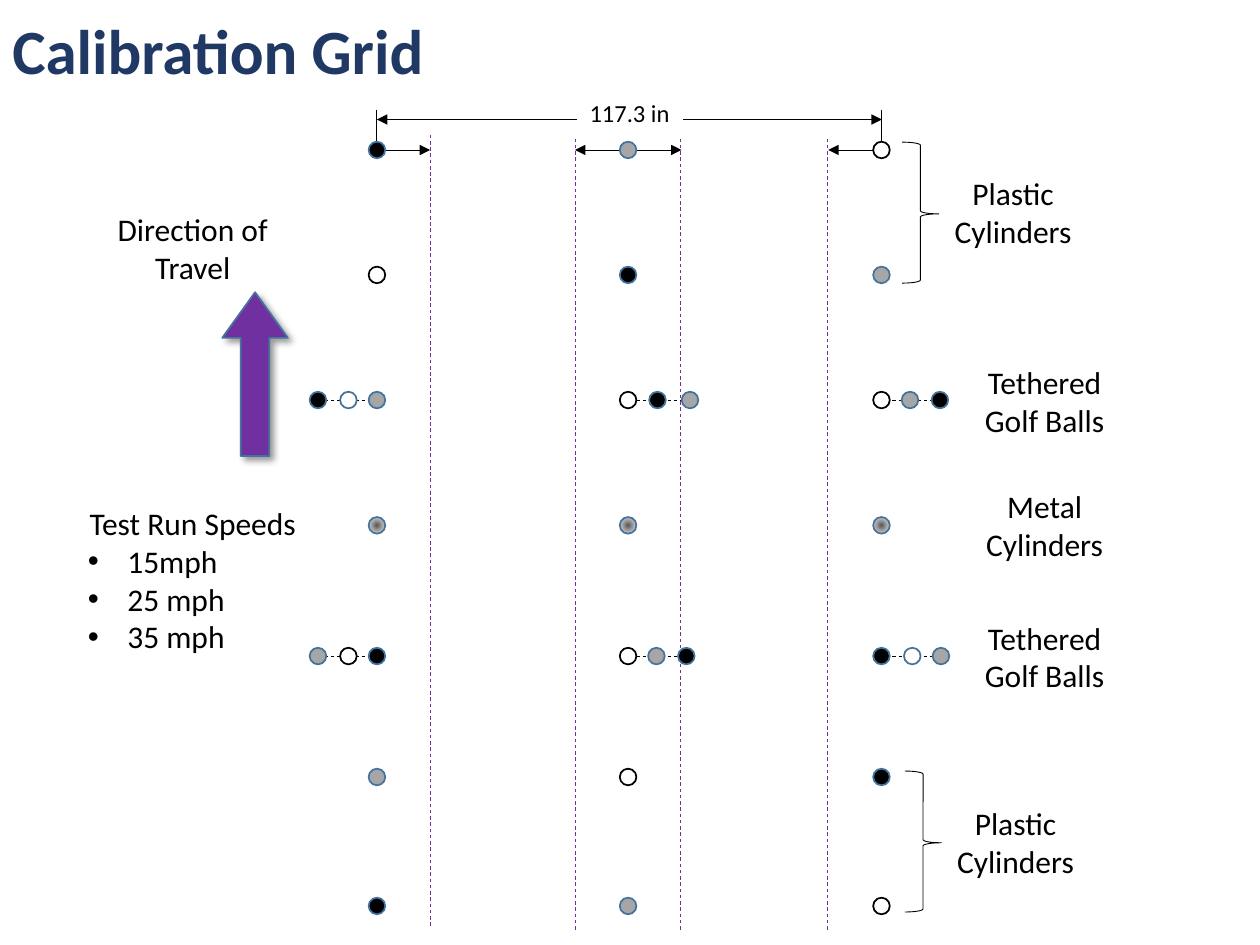
"""Build the calibration grid slide."""
from dataclasses import dataclass

import pptx
import pptx.dml.color
import pptx.enum.dml
import pptx.enum.shapes
import pptx.enum.text
import pptx.oxml
import pptx.oxml.ns
import pptx.util

Pt = pptx.util.Pt
qn = pptx.oxml.ns.qn
Shape = pptx.enum.shapes.MSO_SHAPE
Align = pptx.enum.text.PP_ALIGN
Anchor = pptx.enum.text.MSO_ANCHOR
AutoSize = pptx.enum.text.MSO_AUTO_SIZE

COLORS = {
    "black": "000000", "white": "FFFFFF", "gray": "A6A6A6", "dark": "595959",
    "silver": "AFABAB", "blue": "43739E", "navy": "203864", "purple": "7030A0",
}
NS = 'xmlns:a="http://schemas.openxmlformats.org/drawingml/2006/main"'
DOT = 9.5
COLUMNS = (215.4, 358.9, 503.7)
TOP_ROW = 85.7


@dataclass
class Row:
    y: float
    kinds: str
    xs: tuple = COLUMNS


@dataclass
class Line:
    x1: float
    y1: float
    x2: float
    y2: float
    color: str = "black"
    dash: bool = False
    head: bool = False
    tail: bool = False


@dataclass
class Label:
    text: str
    x: float
    y: float
    w: float = 102.2


DOT_KINDS = {
    "K": ("black", "blue"), "G": ("gray", "blue"), "W": ("white", "black"),
    "B": ("white", "blue"), "M": ("metal", "blue"),
}
ROWS = [
    Row(TOP_ROW, "KGW"),
    Row(157.1, "WKG"),
    Row(228.6, "GWWBKKGGK", COLUMNS + (199.1, 181.7, 375.7, 394.3, 520, 537.1)),
    Row(300.2, "MMM"),
    Row(374.9, "KWKWGGKBG", COLUMNS + (199.1, 181.7, 375.1, 392.2, 521.3, 537.7)),
    Row(444, "GWK"),
    Row(517.7, "KGW"),
]
TETHERS = [Line(x, y, x + 33.8, y, dash=True)
           for y in (228.6, 374.9) for x in (181.8, 360, 502.8)]
GUIDES = [Line(x, y, x, y + 452.2, "purple", dash=True)
          for x, y in ((245.8, 77), (328.6, 79.2), (388.9, 79.2), (473, 79.2))]
DIMENSIONS = [
    Line(215.4, 62.6, 215.4, 81),
    Line(503.9, 62.6, 503.9, 81),
    Line(215.4, 68.3, 503.9, 68.3, head=True, tail=True),
]
OFFSETS = [
    Line(220.2, TOP_ROW, 245.8, TOP_ROW, tail=True),
    Line(363.6, TOP_ROW, 389.4, TOP_ROW, tail=True),
    Line(328.6, TOP_ROW, 354.2, TOP_ROW, head=True),
    Line(473.3, TOP_ROW, 499, TOP_ROW, head=True),
]
LABELS = [
    Label("Direction of Travel", 50.4, 116.6, 119.5),
    Label("Plastic Cylinders", 527.8, 95.8),
    Label("Plastic Cylinders", 529.2, 455.8),
    Label("Tethered Golf Balls", 545.8, 203.8),
    Label("Tethered Golf Balls", 545.8, 349.9),
    Label("Metal Cylinders", 545.8, 275),
]


def rgb(name: str) -> pptx.dml.color.RGBColor:
    """Return a named colour."""
    return pptx.dml.color.RGBColor.from_string(COLORS[name])


def add_text(slide, lines: list[str], x: float, y: float, w: float, h: float, *,
             size: float = 18, color: str = "black", bold: bool = False,
             align=Align.LEFT, anchor=Anchor.TOP, wrap: bool = True,
             grow: bool = True, spacing: float = 1.0, fill: str = "",
             bullets: bool = False):
    """Add a text box whose lines after the first may be bulleted."""
    s = slide.shapes.add_textbox(Pt(x), Pt(y), Pt(w), Pt(h))
    if fill:
        s.fill.solid()
        s.fill.fore_color.rgb = rgb(fill)
    tf = s.text_frame
    tf.word_wrap = wrap
    tf.vertical_anchor = anchor
    tf.auto_size = AutoSize.SHAPE_TO_FIT_TEXT if grow else AutoSize.NONE
    for i, line in enumerate(lines):
        p = tf.paragraphs[0] if i == 0 else tf.add_paragraph()
        bulleted = bullets and i > 0
        p.alignment = Align.LEFT if bulleted else align
        p.line_spacing = spacing
        if bulleted:
            pPr = p._p.get_or_add_pPr()
            pPr.set("marL", str(Pt(22.5)))
            pPr.set("indent", str(Pt(-22.5)))
            pPr.append(pptx.oxml.parse_xml(f'<a:buFont {NS} typeface="Arial"/>'))
            pPr.append(pptx.oxml.parse_xml(f'<a:buChar {NS} char="•"/>'))
        r = p.add_run()
        r.text = line
        r.font.name = "Calibri"
        r.font.size = Pt(size)
        r.font.bold = bold
        r.font.color.rgb = rgb(color)
    return s


def add_shape(slide, kind, x: float, y: float, w: float, h: float, *,
              fill: str = "", line: str = "black", width: float = 1):
    """Add a preset shape with a plain, metal or empty fill."""
    s = slide.shapes.add_shape(kind, Pt(x), Pt(y), Pt(w), Pt(h))
    s.shadow.inherit = False
    s.line.color.rgb = rgb(line)
    s.line.width = Pt(width)
    if not fill:
        s.fill.background()
        return s
    s.fill.solid()
    if fill != "metal":
        s.fill.fore_color.rgb = rgb(fill)
        return s
    stops = "".join(f'<a:gs pos="{pos}"><a:srgbClr val="{COLORS[c]}"/></a:gs>'
                    for pos, c in ((0, "dark"), (50000, "silver"), (100000, "white")))
    spPr = s._element.spPr
    spPr.replace(spPr.find(qn("a:solidFill")), pptx.oxml.parse_xml(
        f'<a:gradFill {NS}><a:gsLst>{stops}</a:gsLst><a:path path="circle">'
        '<a:fillToRect l="50000" t="50000" r="50000" b="50000"/></a:path></a:gradFill>'))
    return s


def add_line(slide, line: Line) -> None:
    """Add a thin straight line with optional dashes and arrowheads."""
    s = slide.shapes.add_connector(pptx.enum.shapes.MSO_CONNECTOR.STRAIGHT,
                                   Pt(line.x1), Pt(line.y1), Pt(line.x2), Pt(line.y2))
    s.line.color.rgb = rgb(line.color)
    s.line.width = Pt(0.5)
    if line.dash:
        s.line.dash_style = pptx.enum.dml.MSO_LINE.DASH
    for tag, shown in (("headEnd", line.head), ("tailEnd", line.tail)):
        if shown:
            s.line._get_or_add_ln().append(
                pptx.oxml.parse_xml(f'<a:{tag} {NS} type="triangle"/>'))
    s._element.spPr.append(pptx.oxml.parse_xml(f"<a:effectLst {NS}/>"))


def add_travel_arrow(slide) -> None:
    """Add the shadowed arrow that points in the direction of travel."""
    s = add_shape(slide, Shape.DOWN_ARROW, 127, 167, 37.5, 93.6,
                  fill="purple", line="blue")
    s.rotation = 180
    s.adjustments[0], s.adjustments[1] = 0.435, 0.695
    s._element.spPr.find(qn("a:effectLst")).append(pptx.oxml.parse_xml(
        f'<a:outerShdw {NS} blurRad="{Pt(4)}" dist="{Pt(3)}" dir="2700000" '
        'algn="tl" rotWithShape="0"><a:srgbClr val="000000">'
        '<a:alpha val="40000"/></a:srgbClr></a:outerShdw>'))


def main() -> None:
    """Build and save the slide."""
    prs = pptx.Presentation()
    prs.slide_width, prs.slide_height = Pt(720), Pt(540)
    slide = prs.slides.add_slide(prs.slide_layouts[6])
    add_text(slide, ["Calibration Grid"], 0, 0, 554.4, 61.9, size=36, color="navy",
             bold=True, anchor=Anchor.MIDDLE, grow=False, spacing=0.9)
    for line in TETHERS + DIMENSIONS + OFFSETS:
        add_line(slide, line)
    add_text(slide, ["117.3 in"], 329.8, 52.6, 60.5, 24.2, size=14,
             wrap=False, fill="white")
    for line in GUIDES:
        add_line(slide, line)
    for row in ROWS:
        for x, kind in zip(row.xs, row.kinds):
            fill, outline = DOT_KINDS[kind]
            add_shape(slide, Shape.OVAL, x - DOT / 2, row.y - DOT / 2, DOT, DOT,
                      fill=fill, line=outline)
    for x, y in ((515.5, 81.2), (517, 440.6)):
        s = add_shape(slide, Shape.RIGHT_BRACE, x, y, 20.9, 80.6, width=0.5)
        s.adjustments[0], s.adjustments[1] = 0.083, 0.509
    add_travel_arrow(slide)
    for label in LABELS:
        add_text(slide, [label.text], label.x, label.y, label.w, 51.1, align=Align.CENTER)
    add_text(slide, ["Test Run Speeds", "15mph", "25 mph", "35 mph"],
             43.2, 284.4, 133.9, 116.6, align=Align.CENTER, wrap=False, bullets=True)
    prs.save("out.pptx")


if __name__ == "__main__":
    main()
